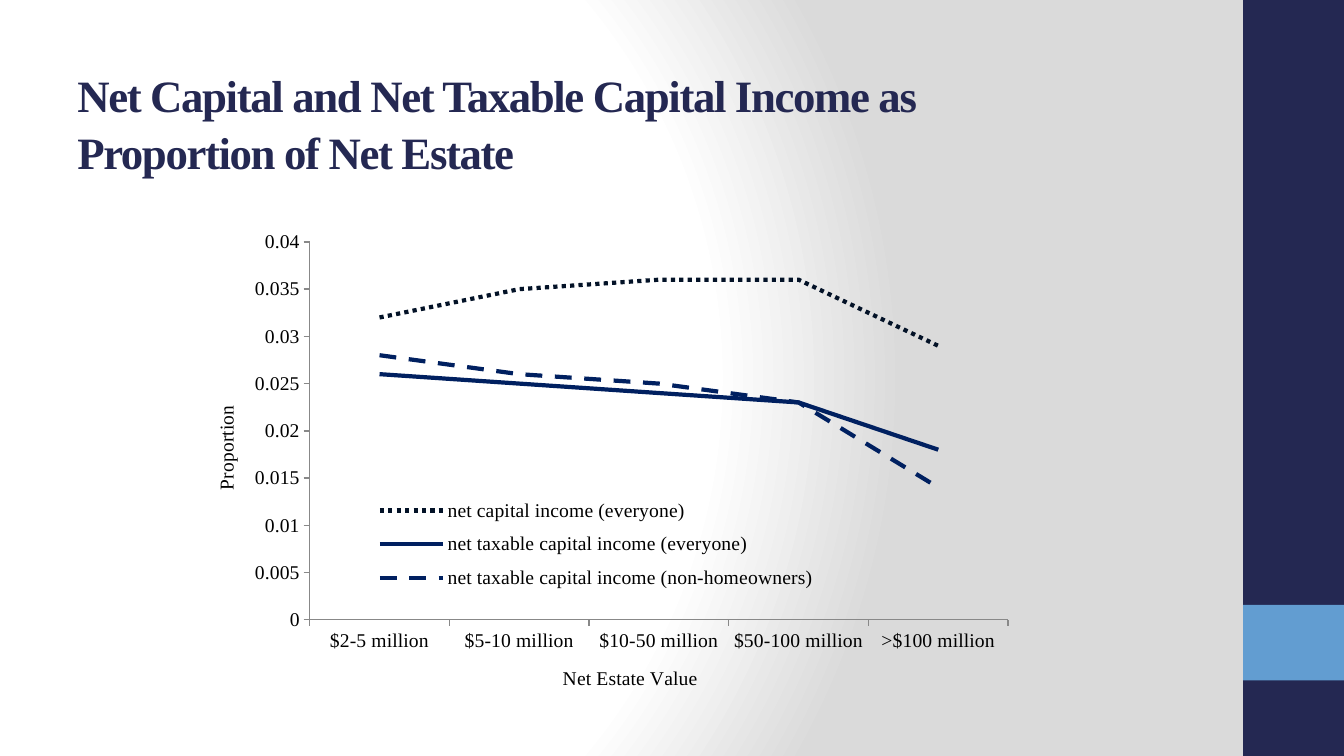
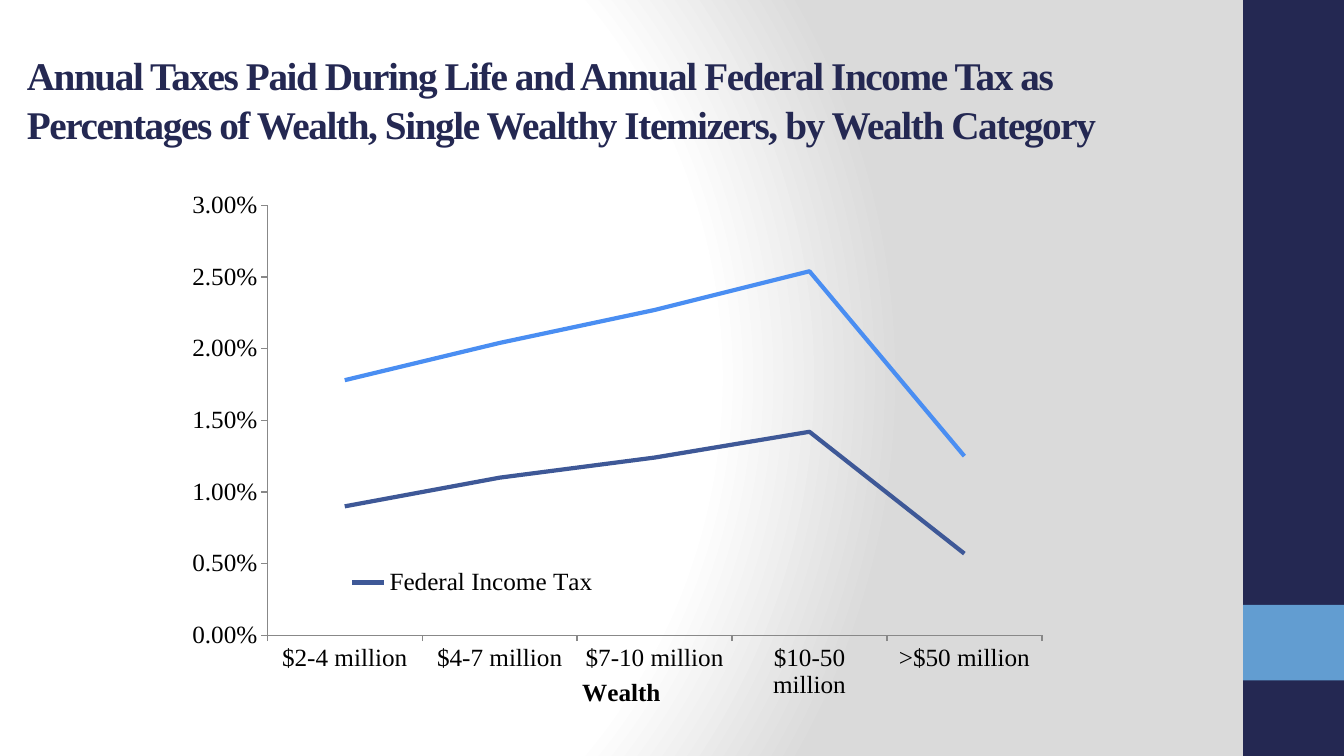
from pptx import Presentation
from pptx.chart.data import CategoryChartData
from pptx.dml.color import RGBColor
from pptx.enum.chart import XL_CHART_TYPE, XL_LEGEND_POSITION, XL_TICK_MARK
from pptx.enum.dml import MSO_LINE
from pptx.enum.shapes import MSO_SHAPE
from pptx.enum.text import MSO_ANCHOR, MSO_AUTO_SIZE, PP_ALIGN
from pptx.oxml import parse_xml
from pptx.oxml.ns import nsdecls, qn
from pptx.util import Pt

LINE = XL_CHART_TYPE.LINE
RIGHT, BOTTOM = XL_LEGEND_POSITION.RIGHT, XL_LEGEND_POSITION.BOTTOM
OUTSIDE, NO_TICK = XL_TICK_MARK.OUTSIDE, XL_TICK_MARK.NONE
SOLID, DOTS, DASHES = MSO_LINE.SOLID, MSO_LINE.ROUND_DOT, MSO_LINE.DASH
RECTANGLE = MSO_SHAPE.RECTANGLE

FONT = "Times New Roman"
NAVY = RGBColor(0x24, 0x28, 0x52)
SKY = RGBColor(0x62, 0x9D, 0xD1)
BLACK = RGBColor(0, 0, 0)
AXIS_GREY = RGBColor(0x88, 0x88, 0x88)
MIDNIGHT = RGBColor(0x03, 0x12, 0x27)
DEEP_BLUE = RGBColor(0x00, 0x20, 0x60)
SLATE_BLUE = RGBColor(0x3E, 0x58, 0x97)
BRIGHT_BLUE = RGBColor(0x4A, 0x8E, 0xF2)

# Side bands: left, top, width, height, colour
BANDS = [(888, 0, 72, 540, NAVY), (888, 432, 72, 54, SKY)]

# Layouts inside a chart are fractions of its size: x, y, width, height
SLIDES = [
    {
        "title": "Net Capital and Net Taxable Capital Income as Proportion of Net Estate",
        "title_box": (48, 42, 732, 90),
        "title_size": 32,
        "chart_box": (144, 156, 594, 341),
        "plot": (0.13, 0.05, 0.84, 0.8),
        "text_size": 14,
        "categories": ["$2-5 million", "$5-10 million", "$10-50 million",
                       "$50-100 million", ">$100 million"],
        "series": [
            ("net capital income (everyone)",
             (0.032, 0.035, 0.036, 0.036, 0.029), MIDNIGHT, DOTS),
            ("net taxable capital income (everyone)",
             (0.026, 0.025, 0.024, 0.023, 0.018), DEEP_BLUE, SOLID),
            ("net taxable capital income (non-homeowners)",
             (0.028, 0.026, 0.025, 0.023, 0.014), DEEP_BLUE, DASHES),
        ],
        "maximum": 0.04,
        "value_format": "General",
        "category_title": ("Net Estate Value", 0.43, 0.94),
        "value_title": ("Proportion", 0.01, 0.39),
        "title_bold": False,
        "legend": (RIGHT, (0.2, 0.57, 0.55, 0.24)),
        "unlisted": [],
    },
    {
        "title": "Annual Taxes Paid During Life and Annual Federal Income Tax as "
                 "Percentages of Wealth, Single Wealthy Itemizers, by Wealth Category",
        "title_box": (12, 30, 786, 80),
        "title_size": 28,
        "chart_box": (102, 126, 654, 384),
        "plot": (0.136, 0.055, 0.846, 0.815),
        "text_size": 18,
        "categories": ["$2-4 million", "$4-7 million", "$7-10 million",
                       "$10-50 million", ">$50 million"],
        "series": [
            ("Federal Income Tax",
             (0.009, 0.011, 0.0124, 0.0142, 0.0057), SLATE_BLUE, SOLID),
            ("Taxes Paid During Life",
             (0.0178, 0.0204, 0.0227, 0.0254, 0.0125), BRIGHT_BLUE, SOLID),
        ],
        "maximum": 0.03,
        "value_format": "0.00%",
        "category_title": ("Wealth", 0.475, 0.94),
        "value_title": None,
        "title_bold": True,
        "legend": (BOTTOM, (0.21, 0.74, 0.3, 0.06)),
        "unlisted": [1],
    },
]


def style_font(font, **values):
    for key, value in {"name": FONT, "bold": False, **values}.items():
        setattr(font, key, value)
    font.color.rgb = BLACK


def place(element, *fractions, inner=False):
    """Give a plot area, legend or axis title a manual layout."""
    for old in element.findall(qn("c:layout")):
        element.remove(old)
    target = '<c:layoutTarget val="inner"/>' if inner else ""
    modes = '<c:xMode val="edge"/><c:yMode val="edge"/>'
    sizes = "".join(f'<c:{key} val="{value}"/>' for key, value in zip("xywh", fractions))
    layout = parse_xml(f'<c:layout {nsdecls("c")}><c:manualLayout>{target}{modes}{sizes}'
                       '</c:manualLayout></c:layout>')
    before = (qn("c:tx"), qn("c:legendPos"), qn("c:legendEntry"))
    element.insert(sum(child.tag in before for child in element), layout)


deck = Presentation()
deck.slide_width, deck.slide_height = Pt(960), Pt(540)

# Shared background: white glow fading to grey on the right
backdrop = deck.slide_master.background.fill
backdrop.gradient()
gradient = deck.slide_master.element.find(".//" + qn("a:gradFill"))
stops = "".join(f'<a:gs pos="{position}"><a:srgbClr val="{colour}"/></a:gs>'
                for position, colour in ((0, "FFFFFF"), (75000, "FFFFFF"), (100000, "DADADA")))
gradient.getparent().replace(gradient, parse_xml(
    f'<a:gradFill {nsdecls("a")} rotWithShape="1"><a:gsLst>{stops}</a:gsLst>'
    '<a:path path="circle"><a:fillToRect l="20000" t="50000" r="100000" b="50000"/></a:path>'
    '</a:gradFill>'))

for content in SLIDES:
    slide = deck.slides.add_slide(deck.slide_layouts[5])

    # Side bands
    for *box, colour in BANDS:
        band = slide.shapes.add_shape(RECTANGLE, *map(Pt, box))
        band.shadow.inherit = False
        band.fill.solid()
        band.fill.fore_color.rgb = colour
        band.line.fill.background()

    # Title
    heading = slide.shapes.title
    heading.left, heading.top, heading.width, heading.height = map(Pt, content["title_box"])
    frame = heading.text_frame
    frame.text = content["title"]
    frame.word_wrap = True
    frame.auto_size = MSO_AUTO_SIZE.NONE
    frame.vertical_anchor = MSO_ANCHOR.MIDDLE
    paragraph = frame.paragraphs[0]
    paragraph.alignment = PP_ALIGN.LEFT
    paragraph.line_spacing = 1.05
    heading_font = paragraph.runs[0].font
    style_font(heading_font, size=Pt(content["title_size"]), bold=True)
    heading_font.color.rgb = NAVY
    paragraph.runs[0]._r.get_or_add_rPr().set("spc", "-100")

    # Line chart
    figures = CategoryChartData()
    figures.categories = content["categories"]
    for name, values, _, _ in content["series"]:
        figures.add_series(name, values)
    chart = slide.shapes.add_chart(LINE, *map(Pt, content["chart_box"]), figures).chart
    text_size = Pt(content["text_size"])
    style_font(chart.font, size=text_size)
    chart.has_title = False
    chart.plots[0].vary_by_categories = False
    place(chart.plots[0]._element.getparent(), *content["plot"], inner=True)
    for series, (_, _, colour, dash) in zip(chart.plots[0].series, content["series"]):
        series.smooth = False
        series.format.line.color.rgb = colour
        series.format.line.width = Pt(3)
        series.format.line.dash_style = dash

    # Axes and their titles
    for axis, axis_title in ((chart.category_axis, content["category_title"]),
                             (chart.value_axis, content["value_title"])):
        for key, value in {"has_major_gridlines": False, "major_tick_mark": OUTSIDE,
                           "minor_tick_mark": NO_TICK}.items():
            setattr(axis, key, value)
        axis.format.line.color.rgb = AXIS_GREY
        axis.format.line.width = Pt(1)
        style_font(axis.tick_labels.font, size=text_size)
        axis.has_title = axis_title is not None
        if axis_title:
            words, x, y = axis_title
            axis.axis_title.text_frame.text = words
            style_font(axis.axis_title.text_frame.paragraphs[0].runs[0].font,
                       size=text_size, bold=content["title_bold"])
            place(axis.axis_title._element, x, y)
    scale = chart.value_axis
    scale.minimum_scale, scale.maximum_scale, scale.major_unit = 0, content["maximum"], 0.005
    scale.tick_labels.number_format = content["value_format"]
    scale.tick_labels.number_format_is_linked = False

    # Legend inside the plot
    chart.has_legend = True
    legend = chart.legend
    legend.position, legend_box = content["legend"]
    legend.include_in_layout = False
    style_font(legend.font, size=text_size)
    for index in content["unlisted"]:
        legend._element.find(qn("c:legendPos")).addnext(parse_xml(
            f'<c:legendEntry {nsdecls("c")}><c:idx val="{index}"/><c:delete val="1"/>'
            '</c:legendEntry>'))
    place(legend._element, *legend_box)

deck.save("out.pptx")
